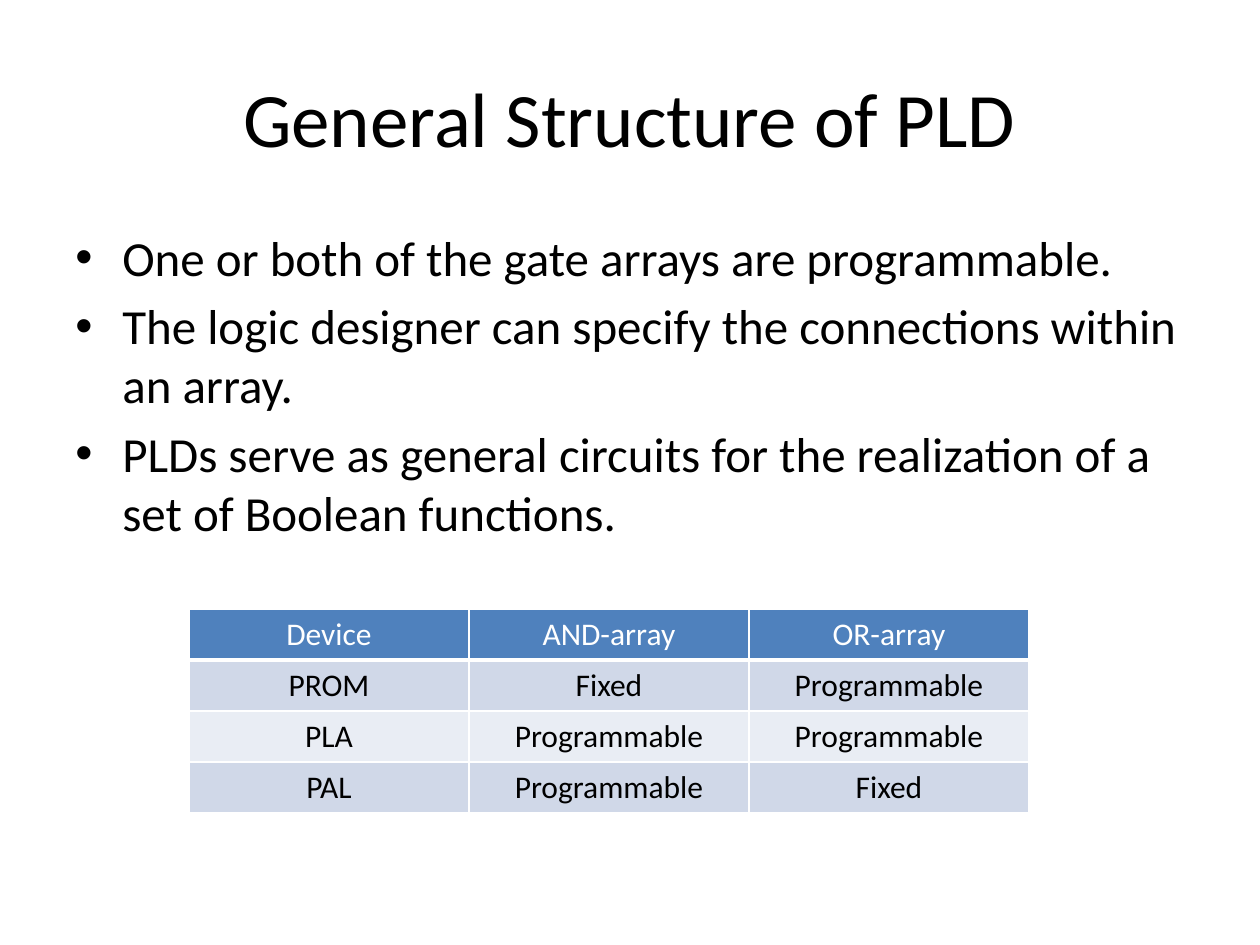
from pptx import Presentation
from pptx.dml.color import RGBColor
from pptx.enum.text import MSO_ANCHOR as Anchor, PP_ALIGN as Align
from pptx.oxml.ns import qn
from pptx.util import Emu, Pt
from lxml.etree import SubElement

EMU_PER_PX = 914400 / 126
BLACK = RGBColor(0x00, 0x00, 0x00)
WHITE = RGBColor(0xFF, 0xFF, 0xFF)
HEADER_BLUE = RGBColor(0x4F, 0x81, 0xBD)
BAND_DARK = RGBColor(0xD0, 0xD8, 0xE8)
BAND_LIGHT = RGBColor(0xE9, 0xED, 0xF4)

TITLE = "General Structure of PLD"
POINTS = [
    "One or both of the gate arrays are programmable.",
    "The logic designer can specify the connections within an array.",
    "PLDs serve as general circuits for the realization of a set of Boolean functions.",
]
DEVICES = [
    ["Device", "AND-array", "OR-array"],
    ["PROM", "Fixed", "Programmable"],
    ["PLA", "Programmable", "Programmable"],
    ["PAL", "Programmable", "Fixed"],
]


def px(length):
    return Emu(round(length * EMU_PER_PX))


class SlideBuilder:
    """Holds the text style and the current slide, and adds elements to it."""

    def __init__(self, slide, font="Calibri"):
        self.slide = slide
        self.font = font

    def add_span(self, para, text, size, color=BLACK):
        span = para.add_run()
        span.text = text
        span.font.name = self.font
        span.font.size = Pt(size)
        span.font.bold = False
        span.font.color.rgb = color

    def text_frame(self, left, top, width, height, anchor):
        box = self.slide.shapes.add_textbox(px(left), px(top), px(width), px(height))
        frame = box.text_frame
        frame.word_wrap = True
        frame.vertical_anchor = anchor
        return frame

    def title(self, text, *place):
        para = self.text_frame(*place, Anchor.MIDDLE).paragraphs[0]
        para.alignment = Align.CENTER
        self.add_span(para, text, 44)

    def bullets(self, points, *place, indent=47):
        frame = self.text_frame(*place, Anchor.TOP)
        for index, point in enumerate(points):
            para = frame.add_paragraph() if index else frame.paragraphs[0]
            para.space_before = Pt(5.6)
            props = para._p.get_or_add_pPr()
            props.set("marL", str(px(indent)))
            props.set("indent", str(px(-indent)))
            SubElement(props, qn("a:buFont"), typeface="Arial")
            SubElement(props, qn("a:buChar"), char="•")
            self.add_span(para, point, 28)

    def borders(self, cell, bottom):
        props = cell._tc.get_or_add_tcPr()
        for side, width in (("L", 1), ("R", 1), ("T", 1), ("B", bottom)):
            line = SubElement(props, qn(f"a:ln{side}"), w=str(Pt(width)))
            fill = SubElement(line, qn("a:solidFill"))
            SubElement(fill, qn("a:srgbClr"), val=str(WHITE))

    def table(self, rows, left, top, width, height):
        place = px(left), px(top), px(width), px(height)
        table = self.slide.shapes.add_table(len(rows), len(rows[0]), *place).table
        for row_index, row in enumerate(rows):
            header = row_index == 0
            band = BAND_DARK if row_index % 2 else BAND_LIGHT
            for column, text in enumerate(row):
                cell = table.cell(row_index, column)
                self.borders(cell, bottom=3 if header else 1)
                cell.fill.solid()
                cell.fill.fore_color.rgb = HEADER_BLUE if header else band
                para = cell.text_frame.paragraphs[0]
                para.alignment = Align.CENTER
                self.add_span(para, text, 18, WHITE if header else BLACK)


def main():
    deck = Presentation()
    deck.slide_width, deck.slide_height = px(1260), px(945)
    page = SlideBuilder(deck.slides.add_slide(deck.slide_layouts[6]))
    page.title(TITLE, 63, 38, 1134, 157)
    page.bullets(POINTS, 63, 221, 1134, 624)
    page.table(DEVICES, 189, 609, 840, 204)
    deck.save("out.pptx")


if __name__ == "__main__":
    main()
